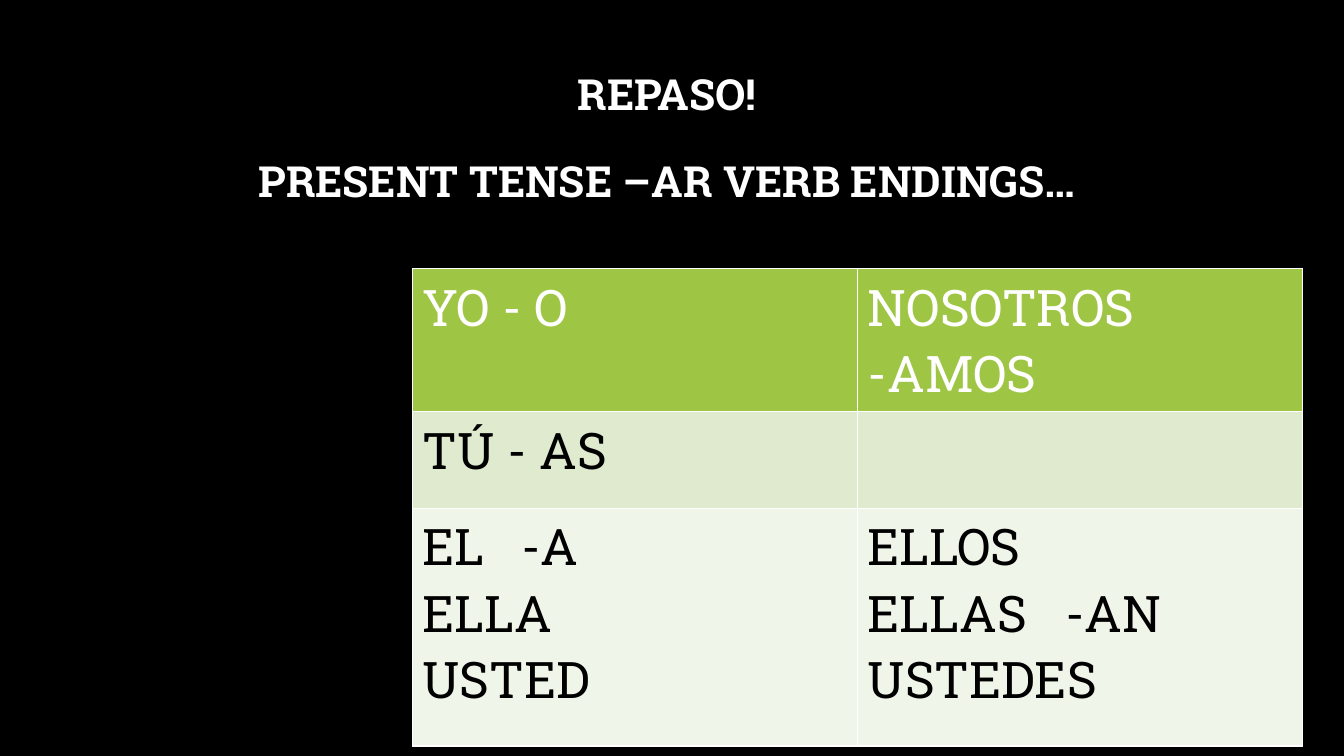
from dataclasses import dataclass
from typing import Optional

import lxml.etree
import pptx
import pptx.dml.color
import pptx.enum.text
import pptx.oxml.ns
import pptx.util

COLORS = {
    "background": "000000",
    "light": "FFFFFF",
    "dark": "000000",
    "header": "9EC544",
    "band": "DFEACF",
    "plain": "F0F5E9",
}
FONT = "Roboto Slab"

# Grid of 160 columns by 90 rows
SLIDE_WIDTH = pptx.util.Inches(13.33)
SLIDE_HEIGHT = pptx.util.Inches(7.5)
COLUMN = SLIDE_WIDTH / 160
ROW = SLIDE_HEIGHT / 90


@dataclass(frozen=True)
class Ending:
    """The pronouns of one cell; a tab sets the ending apart."""
    lines: tuple[str, ...] = ()
    tab_inches: Optional[float] = None


@dataclass(frozen=True)
class EndingRow:
    rows: float
    fill: str
    text_color: str
    cells: tuple[Ending, Ending]


TITLE_LINES = ("REPASO!", "PRESENT TENSE –AR VERB ENDINGS…")
ENDING_ROWS = (
    EndingRow(17, "header", "light",
              (Ending(("YO - O",)), Ending(("NOSOTROS\v-AMOS",)))),
    EndingRow(11.5, "band", "dark", (Ending(("TÚ - AS",)), Ending())),
    EndingRow(28.3, "plain", "dark",
              (Ending(("EL\t-A", "ELLA", "USTED"), 0.98),
               Ending(("ELLOS", "ELLAS\t-AN", "USTEDES"), 1.96))),
)


def columns(count: float) -> int:
    return round(count * COLUMN)


def rows(count: float) -> int:
    return round(count * ROW)


def rgb(name: str) -> pptx.dml.color.RGBColor:
    return pptx.dml.color.RGBColor.from_string(COLORS[name])


def write_lines(text_frame, lines: tuple[str, ...], *, size: float, color: str,
                bold: bool = False, align=pptx.enum.text.PP_ALIGN.LEFT,
                line_spacing: float = 1.0, gap: float = 0,
                tab_inches: Optional[float] = None) -> None:
    for index, line in enumerate(lines):
        paragraph = text_frame.paragraphs[0] if index == 0 else text_frame.add_paragraph()
        paragraph.text = line
        paragraph.alignment = align
        paragraph.line_spacing = line_spacing
        paragraph.space_before = pptx.util.Pt(gap if index else 0)
        for run in paragraph.runs:
            run.font.name = FONT
            run.font.size = pptx.util.Pt(size)
            run.font.bold = bold
            run.font.color.rgb = rgb(color)
        if tab_inches and "\t" in line:
            tab_list = lxml.etree.SubElement(
                paragraph._p.get_or_add_pPr(), pptx.oxml.ns.qn("a:tabLst"))
            lxml.etree.SubElement(tab_list, pptx.oxml.ns.qn("a:tab"),
                                  pos=str(pptx.util.Inches(tab_inches)), algn="l")


def add_borders(cell, color: str, width: float) -> None:
    properties = cell._tc.get_or_add_tcPr()
    for side in ("lnL", "lnR", "lnT", "lnB"):
        line = lxml.etree.SubElement(properties, pptx.oxml.ns.qn(f"a:{side}"),
                                     w=str(pptx.util.Pt(width)))
        fill = lxml.etree.SubElement(line, pptx.oxml.ns.qn("a:solidFill"))
        lxml.etree.SubElement(fill, pptx.oxml.ns.qn("a:srgbClr"), val=COLORS[color])


def add_title(slide) -> None:
    title = slide.shapes.title
    title.left, title.top = columns(12), rows(8)
    title.width, title.height = columns(136), rows(17.4)
    text_frame = title.text_frame
    text_frame.word_wrap = True
    text_frame.auto_size = pptx.enum.text.MSO_AUTO_SIZE.NONE
    text_frame.vertical_anchor = pptx.enum.text.MSO_ANCHOR.MIDDLE
    text_frame.margin_right = pptx.util.Inches(0.2)
    write_lines(text_frame, TITLE_LINES, size=30.6, color="light", bold=True,
                align=pptx.enum.text.PP_ALIGN.CENTER, line_spacing=0.9, gap=29.4)


def add_endings_table(slide) -> None:
    height = sum(row.rows for row in ENDING_ROWS)
    table = slide.shapes.add_table(len(ENDING_ROWS), 2, columns(49.1), rows(32),
                                   columns(106), rows(height)).table
    for row_index, row in enumerate(ENDING_ROWS):
        table.rows[row_index].height = rows(row.rows)
        for column_index, ending in enumerate(row.cells):
            cell = table.cell(row_index, column_index)
            add_borders(cell, "light", 1)
            cell.fill.solid()
            cell.fill.fore_color.rgb = rgb(row.fill)
            write_lines(cell.text_frame, ending.lines, size=36,
                        color=row.text_color, tab_inches=ending.tab_inches)


def main() -> None:
    presentation = pptx.Presentation()
    presentation.slide_width = SLIDE_WIDTH
    presentation.slide_height = SLIDE_HEIGHT
    slide = presentation.slides.add_slide(presentation.slide_layouts[5])
    slide.background.fill.solid()
    slide.background.fill.fore_color.rgb = rgb("background")
    add_title(slide)
    add_endings_table(slide)
    presentation.save("out.pptx")


if __name__ == "__main__":
    main()
